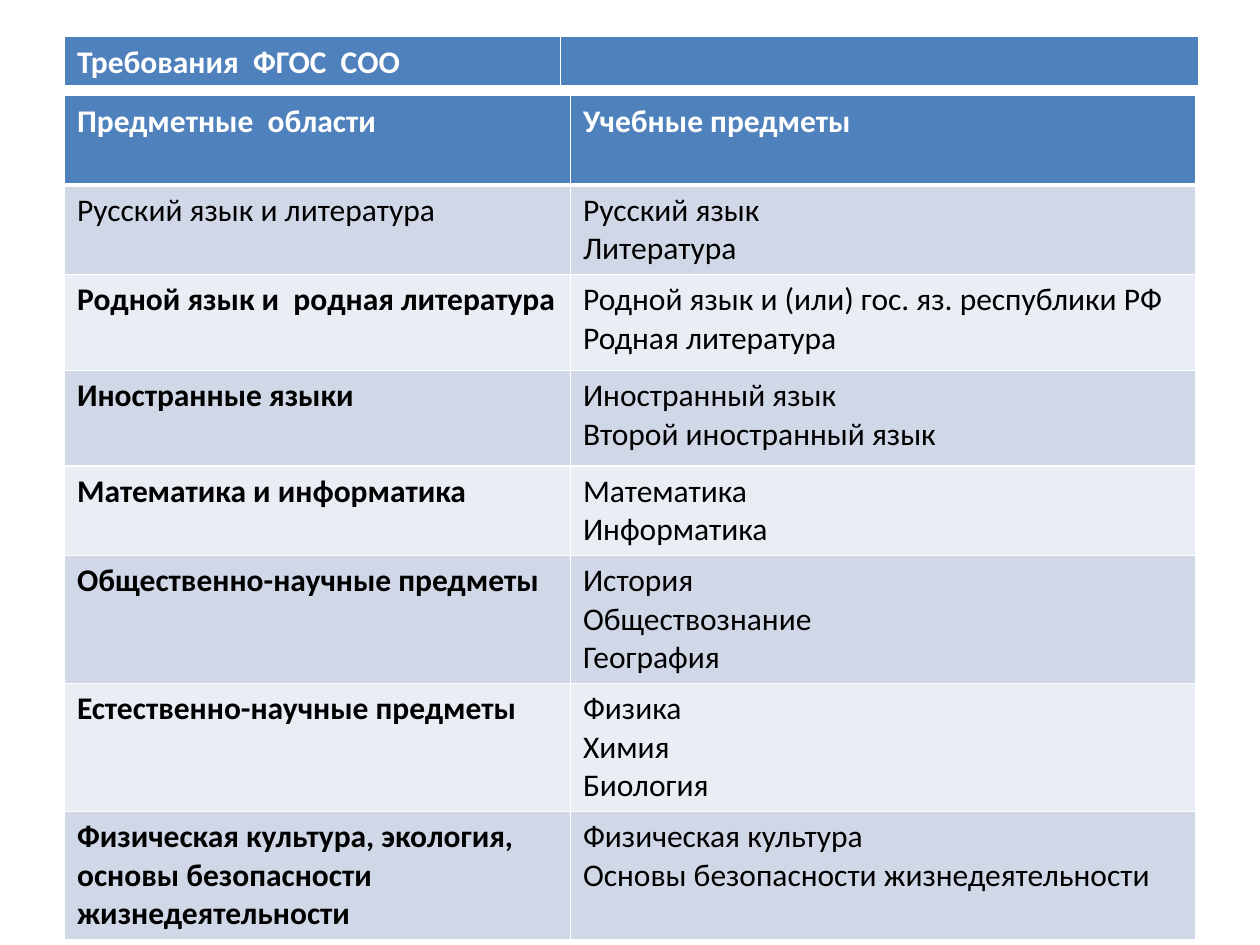
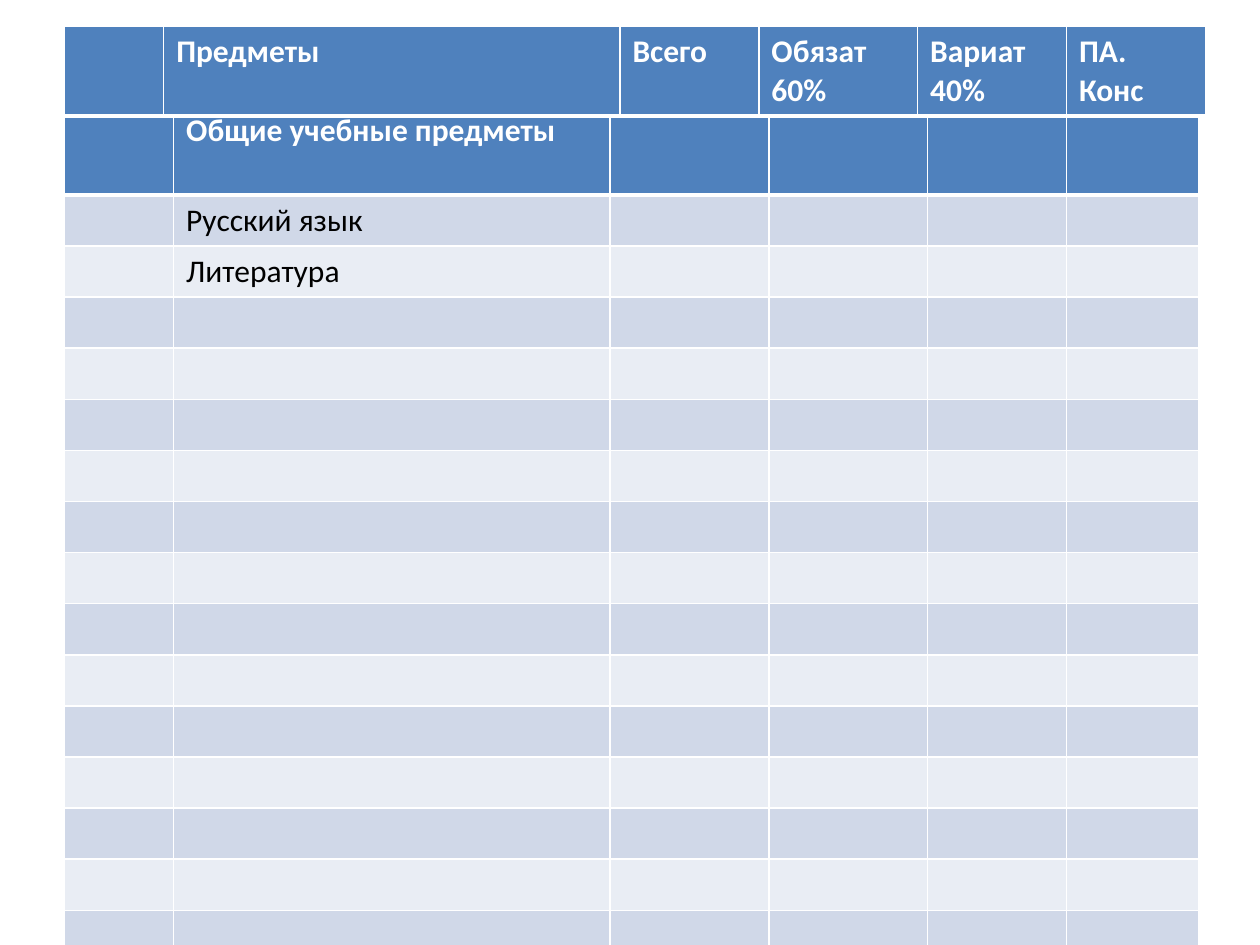
from dataclasses import dataclass

import lxml.etree
import pptx
import pptx.dml.color
import pptx.oxml.ns
import pptx.slide
import pptx.table
import pptx.util

FONT = "Calibri"
WHITE = "FFFFFF"
BLACK = "000000"
HEADER_FILL = "4F81BD"
BAND_FILLS = ("D0D8E8", "E9EDF4")
LEFT = 1.3
THIN, THICK = 1, 3


@dataclass(frozen=True)
class Entry:
    text: str = ""
    bold: bool = False


@dataclass(frozen=True)
class Grid:
    top: float
    widths: list[float]
    heights: list[float]
    rows: list[list[Entry]]


def color(value: str) -> pptx.dml.color.RGBColor:
    return pptx.dml.color.RGBColor.from_string(value)


def write_text(cell: pptx.table._Cell, text: str, *, ink: str = BLACK,
               bold: bool = False, size: float = 18) -> None:
    frame = cell.text_frame
    for index, line in enumerate(text.split("\n")):
        para = frame.paragraphs[0] if index == 0 else frame.add_paragraph()
        para.font.size = pptx.util.Pt(size)
        if line:
            span = para.add_run()
            span.text = line
            span.font.name = FONT
            span.font.size = pptx.util.Pt(size)
            span.font.bold = bold
            span.font.color.rgb = color(ink)


def draw_borders(cell: pptx.table._Cell, top: float, bottom: float) -> None:
    properties = cell._tc.get_or_add_tcPr()
    name = pptx.oxml.ns.qn
    for side, width in (("L", THIN), ("R", THIN), ("T", top), ("B", bottom)):
        line = lxml.etree.SubElement(properties, name(f"a:ln{side}"), w=str(pptx.util.Pt(width)))
        fill = lxml.etree.SubElement(line, name("a:solidFill"))
        lxml.etree.SubElement(fill, name("a:srgbClr"), val=WHITE)


def draw_grid(page: pptx.slide.Slide, grid: Grid) -> None:
    table = page.shapes.add_table(
        len(grid.heights), len(grid.widths), pptx.util.Cm(LEFT), pptx.util.Cm(grid.top),
        pptx.util.Cm(sum(grid.widths)), pptx.util.Cm(sum(grid.heights))).table
    table.horz_banding = False
    for column, width in zip(table.columns, grid.widths):
        column.width = pptx.util.Cm(width)
    for row_index, height in enumerate(grid.heights):
        table.rows[row_index].height = pptx.util.Cm(height)
        header = row_index == 0
        entries = grid.rows[row_index] if row_index < len(grid.rows) else []
        for column_index in range(len(grid.widths)):
            cell = table.cell(row_index, column_index)
            entry = entries[column_index] if column_index < len(entries) else Entry()
            draw_borders(cell, THICK if row_index == 1 else THIN, THICK if header else THIN)
            cell.fill.solid()
            cell.fill.fore_color.rgb = color(
                HEADER_FILL if header else BAND_FILLS[(row_index - 1) % 2])
            write_text(cell, entry.text, ink=WHITE if header else BLACK,
                       bold=header or entry.bold)


def plain_row(*texts: str) -> list[Entry]:
    return [Entry(text) for text in texts]


def area_row(area: str, subjects: str) -> list[Entry]:
    return [Entry(area, bold=True), Entry(subjects)]


REQUIREMENTS = Grid(0.74, [10, 12.86], [1.02], [plain_row("Требования  ФГОС  СОО")])

SUBJECT_AREAS = Grid(
    1.93, [10.2, 12.6], [1.8, 1.8, 1.93, 1.93, 1.8, 2.58, 2.58, 2.58],
    [
        plain_row("Предметные  области", "Учебные предметы"),
        plain_row("Русский язык и литература", "Русский язык\nЛитература"),
        area_row("Родной язык и  родная литература",
                 "Родной язык и (или) гос. яз. республики РФ\nРодная литература"),
        area_row("Иностранные языки", "Иностранный язык\nВторой иностранный язык"),
        area_row("Математика и информатика", "Математика\nИнформатика"),
        area_row("Общественно-научные предметы", "История\nОбществознание\nГеография"),
        area_row("Естественно-научные предметы", "Физика\nХимия\nБиология"),
        area_row("Физическая культура, экология, основы безопасности жизнедеятельности",
                 "Физическая культура\nОсновы безопасности жизнедеятельности"),
    ])

CURRICULUM = Grid(
    2.13, [2.2, 8.8, 3.2, 3.2, 2.8, 2.66], [1.8] + [1.03] * 21,
    [
        plain_row("", "Общие учебные предметы"),
        plain_row("", "Русский язык"),
        plain_row("", "Литература"),
    ])

CURRICULUM_HEADINGS = Grid(
    0.53, [2, 9.2, 2.8, 3.2, 3, 2.8], [1.78],
    [plain_row("", "Предметы", "Всего", "Обязат 60%", "Вариат 40%", "ПА. Конс")])

PAGES = [[REQUIREMENTS, SUBJECT_AREAS], [CURRICULUM, CURRICULUM_HEADINGS]]


def main() -> None:
    deck = pptx.Presentation()
    deck.slide_width = pptx.util.Cm(25.4)
    deck.slide_height = pptx.util.Cm(19.05)
    blank_layout = deck.slide_layouts[6]
    for grids in PAGES:
        page = deck.slides.add_slide(blank_layout)
        for grid in grids:
            draw_grid(page, grid)
    deck.save("out.pptx")


if __name__ == "__main__":
    main()
